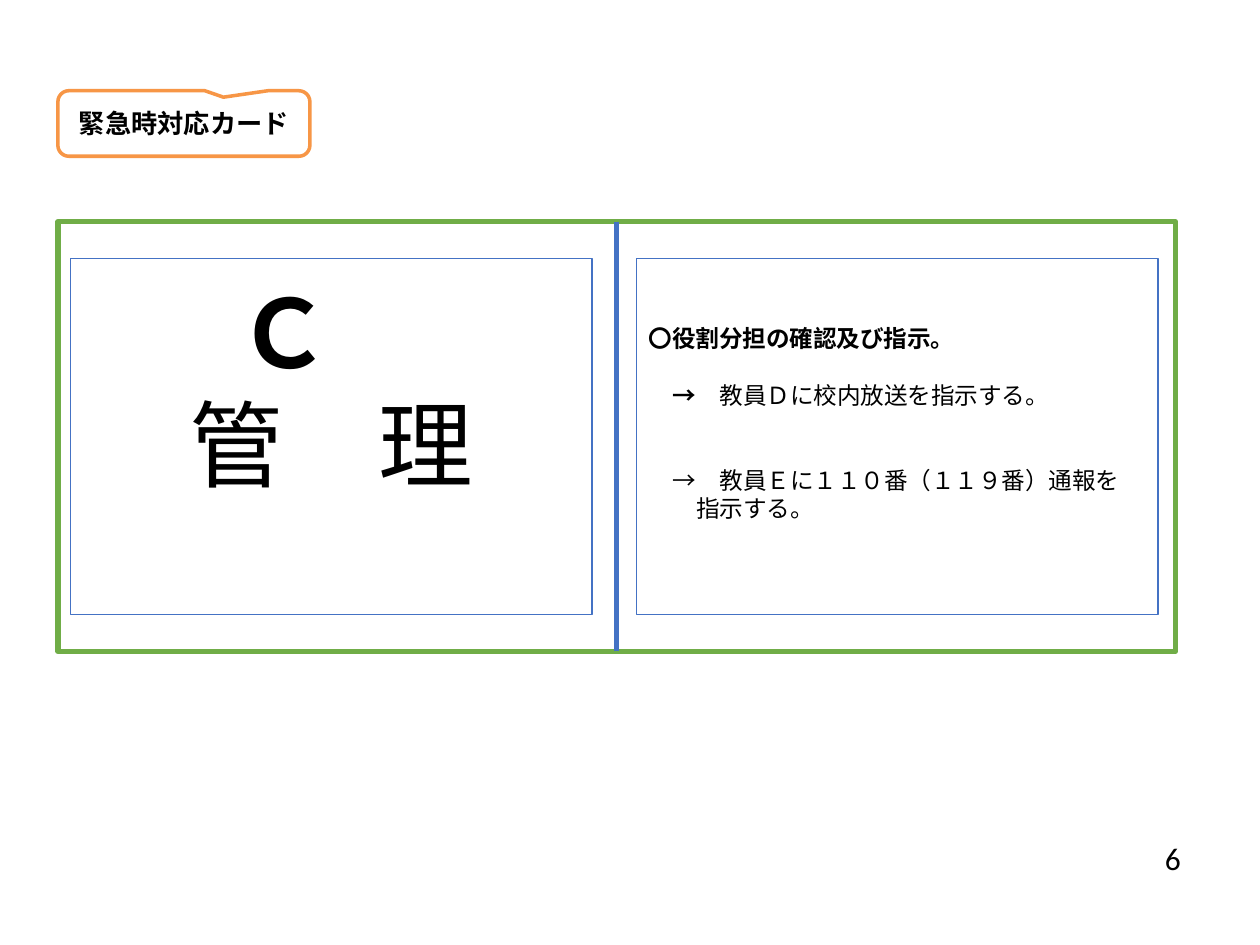
from pptx import Presentation
from pptx.dml.color import RGBColor
from pptx.enum.shapes import MSO_CONNECTOR, MSO_SHAPE
from pptx.enum.text import MSO_ANCHOR, MSO_AUTO_SIZE, PP_ALIGN
from pptx.oxml.ns import qn
from pptx.util import Pt
from lxml.etree import SubElement

BLACK = RGBColor(0x00, 0x00, 0x00)
WHITE = RGBColor(0xFF, 0xFF, 0xFF)
GREEN = RGBColor(0x70, 0xAD, 0x47)
ORANGE = RGBColor(0xF7, 0x96, 0x46)
BLUE = RGBColor(0x44, 0x72, 0xC4)
GOTHIC = "Noto Sans CJK JP"

# Left, top, width, height in points
FRAME = (33.12, 126.72, 638.64, 245.52)
LABEL = (33.12, 51.84, 144, 37.44)
ROLE_CARD = (40.32, 147.6, 298.08, 203.76)
DUTY_CARD = (363.6, 147.6, 298.08, 203.76)
PAGE_NUMBER = (532.08, 472.32, 149.76, 36)


def place(box, area):
    box.left, box.top, box.width, box.height = (Pt(value) for value in area)


def set_outline(box, colour, width):
    box.line.color.rgb = colour
    box.line.width = Pt(width)


def add_outlined_shape(page, kind, area, colour, width, fill=None):
    box = page.shapes.add_shape(kind, *(Pt(value) for value in area))
    box.shadow.inherit = False
    if fill is None:
        box.fill.background()
    else:
        box.fill.solid()
        box.fill.fore_color.rgb = fill
    set_outline(box, colour, width)
    return box


def send_to_back(page, box):
    page.shapes._spTree.insert(2, box._element)


def set_frame(box, anchor=MSO_ANCHOR.TOP, insets=(7.2, 3.6, 7.2, 3.6)):
    frame = box.text_frame
    frame.word_wrap = True
    frame.auto_size = MSO_AUTO_SIZE.NONE
    frame.vertical_anchor = anchor
    (frame.margin_left, frame.margin_top,
     frame.margin_right, frame.margin_bottom) = (Pt(v) for v in insets)


def write(box, spans, first=False, size=13.5, font=GOTHIC, align=PP_ALIGN.LEFT,
          line=None, before=0, left=0, hanging=0):
    """Write one paragraph from (text, bold) spans."""
    frame = box.text_frame
    para = frame.paragraphs[0] if first else frame.add_paragraph()
    para.alignment = align
    para.space_before = Pt(before)
    para.space_after = Pt(0)
    if line:
        para.line_spacing = Pt(line)
    properties = para._p.get_or_add_pPr()
    properties.set("marL", str(Pt(left)))
    properties.set("indent", str(-Pt(hanging)))
    SubElement(properties, qn("a:buNone"))
    for index, (text, bold) in enumerate(spans):
        for part_number, part in enumerate(text.split("\n")):
            if part_number:
                para.add_line_break()
            span = para.add_run()
            span.text = part
            span.font.name = font
            span.font.size = Pt(size)
            span.font.bold = bold
            span.font.color.rgb = BLACK
            latin = span.font._element.find(qn("a:latin"))
            east_asian = latin.makeelement(qn("a:ea"), {"typeface": GOTHIC})
            latin.addnext(east_asian)


def add_divider(page, frame):
    divider = page.shapes.add_connector(MSO_CONNECTOR.STRAIGHT, 0, 0, 0, 0)
    divider.begin_connect(frame, 0)
    divider.end_connect(frame, 2)
    set_outline(divider, BLUE, 3)
    SubElement(divider._element.spPr, qn("a:effectLst"))


def add_label(page):
    callout = add_outlined_shape(page, MSO_SHAPE.ROUNDED_RECTANGULAR_CALLOUT,
                                 LABEL, ORANGE, 2, WHITE)
    for index, value in enumerate((0.157, -0.401, 0.167)):
        callout.adjustments[index] = value
    send_to_back(page, callout)
    title = page.shapes.title
    place(title, LABEL)
    set_frame(title, MSO_ANCHOR.MIDDLE, (5, 3, 5, 3))
    write(title, [("緊急時対応カード", True)], first=True, size=15,
          font="Cambria", align=PP_ALIGN.CENTER)


def add_duty_card(page):
    body = page.placeholders[1]
    place(body, DUTY_CARD)
    set_outline(body, BLUE, 0.75)
    set_frame(body, insets=(7.2, 37.5, 7.2, 3.6))
    pitch = 16.2
    write(body, [("〇役割分担の確認及び指示。", True)], first=True, line=pitch)
    write(body, [("→　", True), ("教員Ｄに校内放送を指示する。", False)],
          line=pitch, before=pitch, left=27, hanging=13.5)
    write(body, [("→　教員Ｅに１１０番（１１９番）通報を\n指示する。", False)],
          line=pitch, before=2 * pitch, left=27, hanging=13.5)


def add_role_card(page):
    card = add_outlined_shape(page, MSO_SHAPE.RECTANGLE, ROLE_CARD, BLUE, 0.75)
    set_frame(card, insets=(7.2, 10, 7.2, 3.6))
    for text, bold in (("Ｃ　", True), ("管　理", False)):
        write(card, [(text, bold)], first=bold, size=54, line=64,
              align=PP_ALIGN.CENTER)


def main():
    deck = Presentation()
    deck.slide_width, deck.slide_height = Pt(720), Pt(540)
    page = deck.slides.add_slide(deck.slide_layouts[1])

    # Heading label, then the frame behind everything
    add_label(page)
    frame = add_outlined_shape(page, MSO_SHAPE.RECTANGLE, FRAME, GREEN, 3, WHITE)
    send_to_back(page, frame)

    # The two halves of the card
    add_duty_card(page)
    add_divider(page, frame)
    add_role_card(page)

    # Page number
    number = page.shapes.add_textbox(*(Pt(value) for value in PAGE_NUMBER))
    set_frame(number, MSO_ANCHOR.MIDDLE)
    write(number, [("6", False)], first=True, size=18, font="Calibri",
          align=PP_ALIGN.RIGHT)

    deck.save("out.pptx")


if __name__ == "__main__":
    main()
